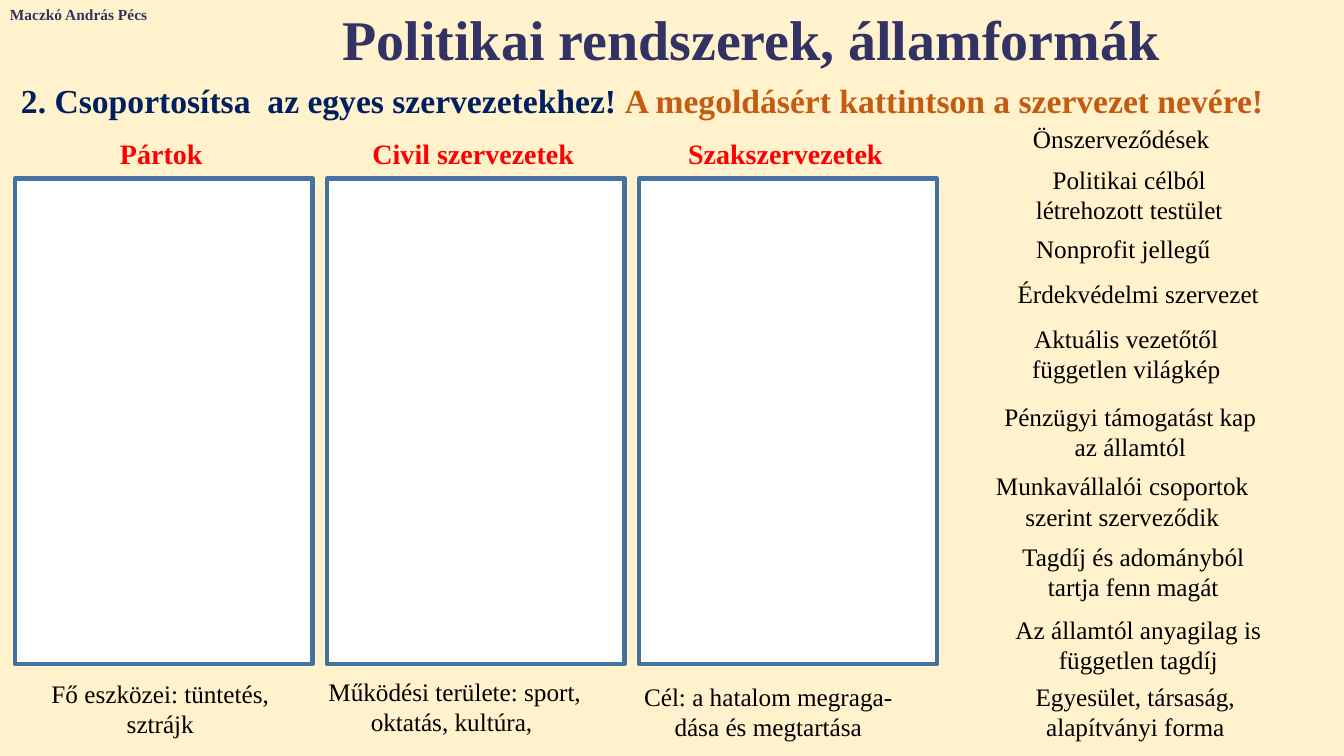
from pptx import Presentation
from pptx.dml.color import RGBColor
from pptx.enum.shapes import MSO_SHAPE
from pptx.enum.text import MSO_AUTO_SIZE, PP_ALIGN
from pptx.util import Inches, Pt

THEME = {
    "font": "Times New Roman",
    "background": "FFF2CC", "heading": "323264", "task": "002060",
    "hint": "C55A11", "group": "FF0000", "card": "000000",
    "box": "FFFFFF", "border": "43739E",
    "author_size": 11, "title_size": 40, "task_size": 24,
    "group_size": 20, "card_size": 18, "border_width": 3,
}

# Grid: three answer columns, then a column of cards on the right
SLIDE_WIDTH, SLIDE_HEIGHT = 13.33, 7.5
COLUMN_LEFT, COLUMN_PITCH, BOX_WIDTH = 0.15, 3.095, 2.95
BOX_TOP, BOX_HEIGHT = 1.77, 4.82
LABEL_TOP, LABEL_WIDTH, LABEL_HEIGHT = 1.31, 2.88, 0.44
CARD_WIDTH, LINE_HEIGHT, CARD_PADDING = 2.82, 0.305, 0.1


def color(name):
    return RGBColor.from_string(THEME[name])


def add_text(slide, area, runs, size, bold=True, align=PP_ALIGN.CENTER):
    """Add a wrapped text box; runs are (text, colour name) pairs."""
    text_box = slide.shapes.add_textbox(*(Inches(length) for length in area))
    frame = text_box.text_frame
    frame.word_wrap = True
    frame.auto_size = MSO_AUTO_SIZE.SHAPE_TO_FIT_TEXT
    paragraph = frame.paragraphs[0]
    paragraph.alignment = align
    paragraph.font.name = THEME["font"]
    paragraph.font.size = Pt(THEME[size])
    paragraph.font.bold = bold
    for text, color_name in runs:
        run = paragraph.add_run()
        run.text = text
        run.font.color.rgb = color(color_name)


presentation = Presentation()
presentation.slide_width = Inches(SLIDE_WIDTH)
presentation.slide_height = Inches(SLIDE_HEIGHT)
slide = presentation.slides.add_slide(presentation.slide_layouts[6])
slide.background.fill.solid()
slide.background.fill.fore_color.rgb = color("background")

# Author, task and title
add_text(slide, (0, 0, 1.59, 0.29), [("Maczkó András Pécs", "heading")],
         "author_size", align=PP_ALIGN.LEFT)
add_text(slide, (0.11, 0.74, 13.19, 0.5),
         [("2. Csoportosítsa  az egyes szervezetekhez! ", "task"),
          ("A megoldásért kattintson a szervezet nevére!", "hint")],
         "task_size", align=PP_ALIGN.LEFT)
add_text(slide, (1.56, 0, 11.78, 0.77),
         [("Politikai rendszerek, államformák", "heading")], "title_size")

# Answer boxes with their group names
for column, group in enumerate(["Pártok", "Civil szervezetek", "Szakszervezetek"]):
    left = COLUMN_LEFT + column * COLUMN_PITCH
    box = slide.shapes.add_shape(
        MSO_SHAPE.RECTANGLE, Inches(left), Inches(BOX_TOP),
        Inches(BOX_WIDTH), Inches(BOX_HEIGHT))
    box.shadow.inherit = False
    box.fill.solid()
    box.fill.fore_color.rgb = color("box")
    box.line.color.rgb = color("border")
    box.line.width = Pt(THEME["border_width"])
    add_text(slide, (left + 0.01, LABEL_TOP, LABEL_WIDTH, LABEL_HEIGHT),
             [(group, "group")], "group_size")

# Loose cards to sort: left, top, number of lines, text
cards = [
    (9.71, 1.17, 1, "Önszerveződések"),
    (9.79, 1.58, 2, "Politikai célból létrehozott testület"),
    (9.73, 2.27, 1, "Nonprofit jellegű"),
    (9.88, 2.71, 1, "Érdekvédelmi szervezet"),
    (9.76, 3.16, 2, "Aktuális vezetőtől független világkép"),
    (9.80, 3.93, 2, "Pénzügyi támogatást kap az államtól"),
    (9.72, 4.62, 2, "Munkavállalói csoportok szerint szerveződik"),
    (9.83, 5.32, 2, "Tagdíj és adományból tartja fenn magát"),
    (9.88, 6.04, 2, "Az államtól anyagilag is független tagdíj"),
    (0.18, 6.68, 2, "Fő eszközei: tüntetés, sztrájk"),
    (3.10, 6.66, 2, "Működési területe: sport, oktatás, kultúra, "),
    (9.85, 6.71, 2, "Egyesület, társaság, alapítványi forma"),
    (6.21, 6.71, 2, "Cél: a hatalom megraga-dása és megtartása"),
]
for left, top, lines, text in cards:
    height = lines * LINE_HEIGHT + CARD_PADDING
    add_text(slide, (left, top, CARD_WIDTH, height), [(text, "card")],
             "card_size", bold=False)

presentation.save("out.pptx")
